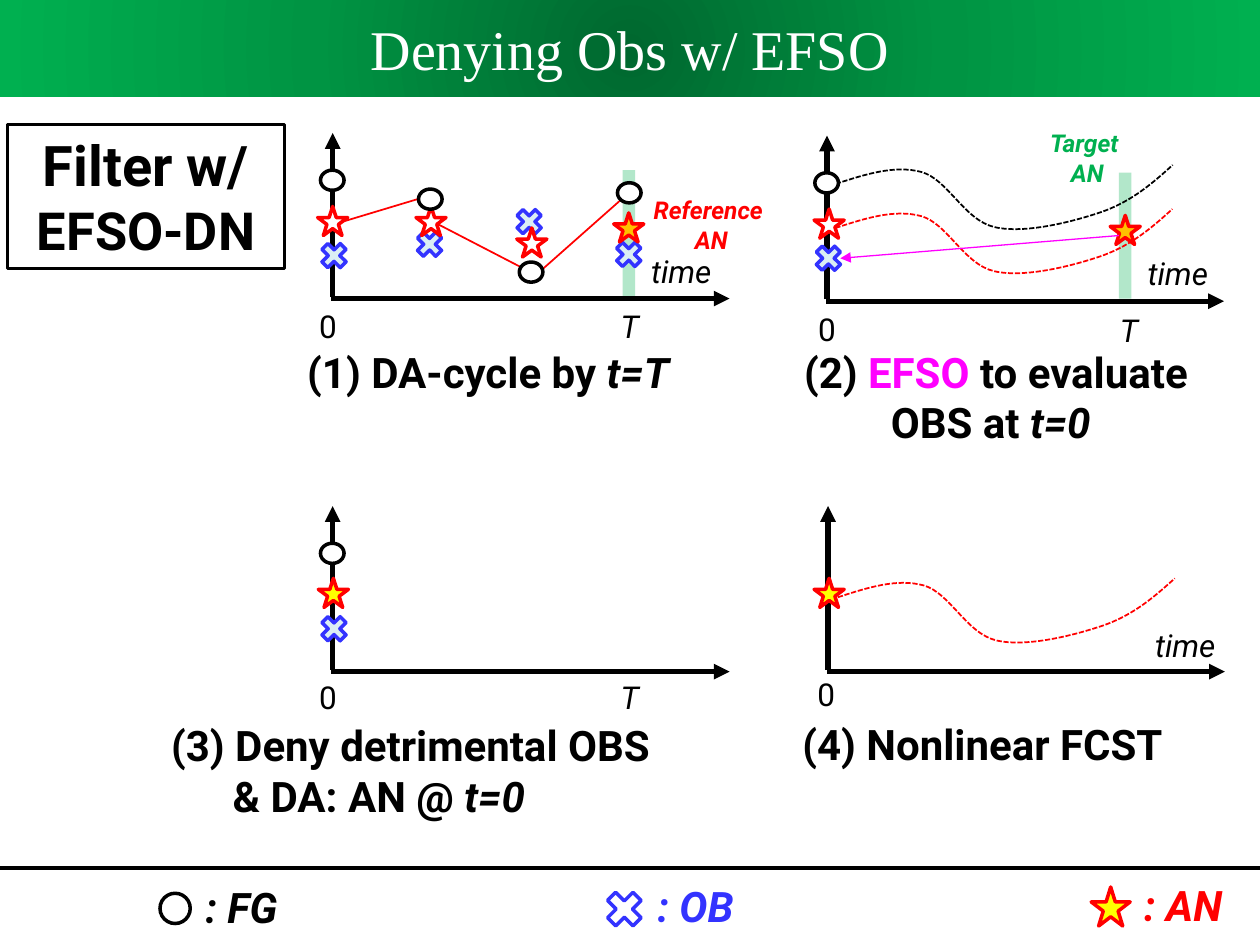
from lxml import etree
from pptx import Presentation
from pptx.dml.color import RGBColor
from pptx.enum.dml import MSO_LINE
from pptx.enum.shapes import MSO_CONNECTOR, MSO_SHAPE
from pptx.enum.text import MSO_ANCHOR, PP_ALIGN
from pptx.oxml import parse_xml
from pptx.oxml.ns import nsdecls, qn
from pptx.util import Pt

BLACK, WHITE, RED, BLUE = "000000", "FFFFFF", "FF0000", "3333FF"
GREEN, MAGENTA, YELLOW, GOLD, PALE = "00B050", "FF00FF", "FFFF00", "FFC000", "DBEEF4"
LEFT, CENTER = PP_ALIGN.LEFT, PP_ALIGN.CENTER
TITLE_STOPS = [(0, "00682F"), (50, "009443"), (100, GREEN)]
BOLD, ITALIC = {"bold": True}, {"italic": True}
BOTH = BOLD | ITALIC

MARKERS = {
    "FG": (MSO_SHAPE.OVAL, BLACK, 13.5, 11.5),
    "OB": (MSO_SHAPE.MATH_MULTIPLY, BLUE, 20, 20),
    "AN": (MSO_SHAPE.STAR_5_POINT, RED, 17.2, 16.6),
}
START = [("FG", 0, -67.6, WHITE), ("OB", 1, -24.5, PALE)]
PANELS = [
    {"origin": (189.9, 170.6), "zero": (-2.6, 1.5), "T": (169.6, 1.5), "bar": 169.5,
     "links": [((112.5, -10), (174.4, -64.8)), ((0.9, -42.4), (60.7, -60.4)),
               ((54.9, -45.3), (117.5, -12.9))],
     "markers": START + [
         ("AN", 0.2, -44.3, WHITE),
         ("OB", 55.6, -31, PALE), ("AN", 56.4, -44.3, WHITE), ("FG", 56, -56.8, WHITE),
         ("OB", 112.5, -43.9, PALE), ("AN", 114, -32, WHITE), ("FG", 113.6, -15.1, WHITE),
         ("OB", 169.4, -25.2, PALE), ("AN", 169.4, -40.6, GOLD), ("FG", 169.7, -60.4, WHITE)]},
    {"origin": (472.4, 172.1), "zero": (0, 1.4), "T": (172.4, 2.1), "bar": 170.6,
     "forecasts": [((5.2, -67), BLACK), ((5, -41.8), RED)],
     "markers": START + [("AN", 1.4, -44.3, WHITE), ("AN", 170.6, -40.7, GOLD)]},
    {"origin": (189.9, 383.8), "zero": (-2.6, 0), "T": (169.6, 0),
     "markers": START + [("AN", 0.6, -45, YELLOW)]},
    {"origin": (473, 383.8), "zero": (-1, -1.4),
     "forecasts": [((5.8, -42.5), RED)],
     "markers": [("AN", 0.8, -45, YELLOW)]},
]
WAVE = [(0, 0), (17.2, -5.6), (33.8, -10.9), (48.9, -6.8), (64, -2.7), (73.4, 20.7),
        (90.7, 24.7), (108, 28.7), (135.8, 21.6), (152.8, 15.7), (169.7, 9.5),
        (181.2, -0.6), (192.5, -10.8)]
EFSO_ARROW = ((639.4, 134.6), (480.2, 147.6))

LABELS = [
    ((4.3, 71.3, 158.4, 82), [[("Filter w/", {"size": Pt(32)})], [("EFSO-DN", {})]],
     30, BLACK, BOLD, CENTER),
    ((168.5, 194.4, 236, 36), [[("(1) DA-cycle by ", {}), ("t=T", ITALIC)]],
     24, BLACK, BOLD, LEFT),
    ((447.1, 194.4, 244, 65.5),
     [[("(2) ", {}), ("EFSO", {"color": MAGENTA}), (" to evaluate", {})],
      [("OBS at ", {}), ("t=0 ", ITALIC)]], 24, BLACK, BOLD, CENTER),
    ((90.7, 407.5, 306, 36), [[("(3) Deny detrimental OBS", {})]], 24, BLACK, BOLD, LEFT),
    ((125.8, 436.5, 200, 36), [[("& DA: AN @ ", {}), ("t=0", ITALIC)]],
     24, BLACK, BOLD, LEFT),
    ((451.4, 406.8, 228, 36), [[("(4) Nonlinear FCST", {})]], 24, BLACK, BOLD, LEFT),
    ((365.8, 108, 81.4, 41), [[("Reference ", {})], [("AN", {})]], 14, RED, BOTH, CENTER),
    ((591.1, 69.8, 60.5, 41), [[("Target ", {})], [("AN", {})]], 14, GREEN, BOTH, CENTER),
]
TIME_SPOTS = [(365, 140.4), (648.7, 141.8), (653, 354.2)]
LEGEND = [("FG", BLACK, WHITE, (100.1, 519.1), 17.3, (110.2, 500.4)),
          ("OB", BLUE, WHITE, (356.8, 519.5), 28, (368.6, 499.7)),
          ("AN", RED, YELLOW, (634.7, 518), 22.3, (646.6, 499))]


def rgb(value):
    return RGBColor.from_string(value)


def style(run, color, **values):
    run.font.color.rgb = rgb(color)
    for name, value in values.items():
        setattr(run.font, name, value)


def add_label(slide, box, paragraphs, size, color, formats, align):
    shape = slide.shapes.add_textbox(*map(Pt, box))
    frame = shape.text_frame
    frame.word_wrap = False
    for index, runs in enumerate(paragraphs):
        paragraph = frame.paragraphs[0] if index == 0 else frame.add_paragraph()
        paragraph.alignment = align
        for text, changes in runs:
            run = paragraph.add_run()
            run.text = text
            base = {"name": "Roboto", "size": Pt(size), "color": color}
            style(run, **(base | formats | changes))
    return shape


def add_line(slide, start, end, color, width, arrow=False):
    points = map(Pt, (*start, *end))
    line = slide.shapes.add_connector(MSO_CONNECTOR.STRAIGHT, *points)
    line.line.color.rgb, line.line.width = rgb(color), Pt(width)
    if arrow:
        etree.SubElement(line.line._get_or_add_ln(), qn("a:tailEnd"), type="triangle")
    etree.SubElement(line._element.spPr, qn("a:effectLst"))


def add_marker(slide, kind, x, y, fill, size=None):
    preset, color, width, height = MARKERS[kind]
    width, height = size or (width, height)
    box = map(Pt, (x - width / 2, y - height / 2, width, height))
    shape = slide.shapes.add_shape(preset, *box)
    shape.shadow.inherit = False
    shape.fill.solid()
    shape.fill.fore_color.rgb = rgb(fill)
    shape.line.color.rgb, shape.line.width = rgb(color), Pt(2)


def add_bar(slide, x, y):
    shape = slide.shapes.add_shape(MSO_SHAPE.RECTANGLE, Pt(x - 3.6), Pt(y - 73.4), Pt(7.2), Pt(72))
    shape.shadow.inherit = False
    shape.line.fill.background()
    shape.fill.solid()
    shape.fill.fore_color.rgb = rgb(GREEN)
    tint = shape._element.spPr.find(".//" + qn("a:srgbClr"))
    etree.SubElement(tint, qn("a:alpha"), val="30000")


def add_forecast(slide, x, y, color):
    points = [(Pt(x + dx), Pt(y + dy)) for dx, dy in WAVE]
    builder = slide.shapes.build_freeform(*points[0])
    builder.add_line_segments(points[1:], close=False)
    shape = builder.convert_to_shape()
    shape.shadow.inherit = False
    shape.fill.background()
    shape.line.color.rgb, shape.line.width = rgb(color), Pt(1)
    shape.line.dash_style = MSO_LINE.SQUARE_DOT
    outline = shape._element.spPr.find(".//" + qn("a:path"))
    segments = outline.findall(qn("a:lnTo"))
    for first in range(0, len(segments), 3):
        curve = etree.SubElement(outline, qn("a:cubicBezTo"))
        for segment in segments[first:first + 3]:
            curve.append(segment[0])
            outline.remove(segment)


def add_title(slide):
    title = slide.shapes.title
    title.left, title.top, title.width, title.height = map(Pt, (0, 0, 720, 55.4))
    stops = "".join(f'<a:gs pos="{position * 1000}"><a:srgbClr val="{color}"/></a:gs>'
                    for position, color in TITLE_STOPS)
    title._element.spPr.append(parse_xml(
        f'<a:gradFill {nsdecls("a")}><a:gsLst>{stops}</a:gsLst><a:path path="circle">'
        '<a:fillToRect l="50000" t="50000" r="50000" b="50000"/></a:path></a:gradFill>'))
    title.text_frame.text = "Denying Obs w/ EFSO"
    title.text_frame.vertical_anchor = MSO_ANCHOR.MIDDLE
    paragraph = title.text_frame.paragraphs[0]
    paragraph.alignment = CENTER
    style(paragraph.runs[0], WHITE, name="Times New Roman", size=Pt(32))


def add_panel(slide, panel):
    x, y = panel["origin"]
    for start, end in panel.get("links", []):
        add_line(slide, *((x + dx, y + dy) for dx, dy in (start, end)), RED, 1)
    if "bar" in panel:
        add_bar(slide, x + panel["bar"], y)
    add_line(slide, (x + 0.2, y - 1), (x + 0.2, y - 94.6), BLACK, 3, arrow=True)
    add_line(slide, (x - 0.5, y), (x + 227, y), BLACK, 3, arrow=True)
    for (dx, dy), color in panel.get("forecasts", []):
        add_forecast(slide, x + dx, y + dy, color)
    for kind, dx, dy, fill in panel["markers"]:
        add_marker(slide, kind, x + dx, y + dy, fill)
    for text, key, formats in (("0", "zero", {}), ("T", "T", ITALIC)):
        if key in panel:
            dx, dy = panel[key]
            box = (x + dx - 12, y + dy, 24, 29)
            add_label(slide, box, [[(text, {})]], 18, BLACK, formats, CENTER)


def main():
    """Build the slide on denying observations with EFSO."""
    presentation = Presentation()
    presentation.slide_width, presentation.slide_height = Pt(720), Pt(540)
    slide = presentation.slides.add_slide(presentation.slide_layouts[5])
    add_title(slide)
    for panel in PANELS:
        add_panel(slide, panel)
    add_line(slide, *EFSO_ARROW, MAGENTA, 0.75, arrow=True)
    labels = [add_label(slide, *label) for label in LABELS]
    labels[0].line.color.rgb, labels[0].line.width = rgb(BLACK), Pt(1.5)
    for x, y in TIME_SPOTS:
        add_label(slide, (x, y, 50.4, 29), [[("time", {})]], 18, BLACK, ITALIC, LEFT)
    add_line(slide, (0, 496), (720, 496), BLACK, 2.25)
    for kind, color, fill, center, size, corner in LEGEND:
        add_marker(slide, kind, *center, fill, (size, size))
        add_label(slide, (*corner, 62, 36), [[(f": {kind}", {})]], 24, color, BOTH, LEFT)
    presentation.save("out.pptx")


if __name__ == "__main__":
    main()
